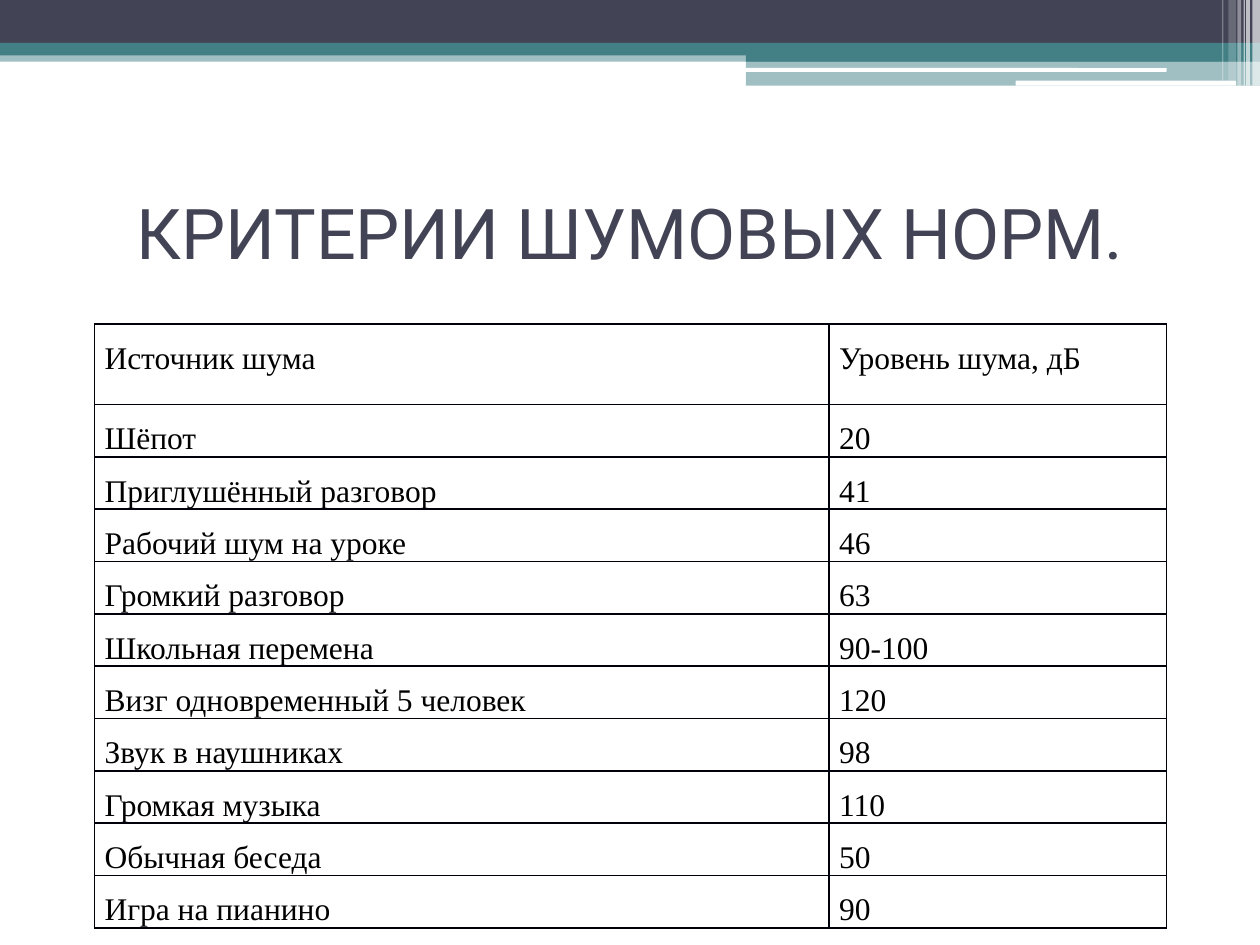
from lxml import etree
from pptx import Presentation
from pptx.dml.color import RGBColor
from pptx.enum.shapes import MSO_SHAPE
from pptx.enum.text import MSO_ANCHOR, PP_ALIGN
from pptx.oxml.ns import qn
from pptx.util import Inches, Pt

RECTANGLE = MSO_SHAPE.RECTANGLE
ROUNDED = MSO_SHAPE.ROUNDED_RECTANGLE
MIDDLE = MSO_ANCHOR.MIDDLE
CENTER = PP_ALIGN.CENTER
JUSTIFY = PP_ALIGN.JUSTIFY

COLORS = {"navy": "424456", "teal": "438086", "white": "FFFFFF",
          "black": "000000", "border": "00000A"}

TITLE = "КРИТЕРИИ ШУМОВЫХ НОРМ."
ROWS = [
    ("Источник шума", "Уровень шума, дБ"),
    ("Шёпот", "20"),
    ("Приглушённый разговор", "41"),
    ("Рабочий шум на уроке", "46"),
    ("Громкий разговор", "63"),
    ("Школьная перемена", "90-100"),
    ("Визг одновременный 5 человек", "120"),
    ("Звук в наушниках", "98"),
    ("Громкая музыка", "110"),
    ("Обычная беседа", "50"),
    ("Игра на пианино", "90"),
]
COLUMN_WIDTHS = (5.83, 2.68)
HEADER_HEIGHT, ROW_HEIGHT = 0.64, 0.41

BANDS = [
    (RECTANGLE, 0, 0.4, 10, 0.09, "teal", 50),
    (RECTANGLE, 0, 0, 10, 0.34, "navy", 100),
    (RECTANGLE, 0, 0.34, 10, 0.1, "teal", 100),
    (RECTANGLE, 5.92, 0.39, 4.08, 0.1, "teal", 100),
    (RECTANGLE, 5.92, 0.48, 4.08, 0.2, "teal", 50),
    (ROUNDED, 5.91, 0.54, 3.35, 0.03, "white", 100),
    (ROUNDED, 8.06, 0.64, 1.75, 0.04, "white", 100),
]
STRIPES = [
    (9.94, 0.06, 0.68, 65),
    (9.89, 0.03, 0.68, 65),
    (9.87, 0.01, 0.68, 60),
    (9.82, 0.03, 0.68, 40),
    (9.75, 0.06, 0.64, 20),
    (9.7, 0.01, 0.64, 30),
]


def rgb(name):
    return RGBColor.from_string(COLORS[name])


def add_band(slide, kind, left, top, width, height, color, opacity):
    band = slide.shapes.add_shape(
        kind, Inches(left), Inches(top), Inches(width), Inches(height))
    band.shadow.inherit = False
    band.line.fill.background()
    band.fill.solid()
    band.fill.fore_color.rgb = rgb(color)
    if opacity < 100:
        tint = band.fill._xPr.find(".//" + qn("a:srgbClr"))
        etree.SubElement(tint, qn("a:alpha"), val=str(opacity * 1000))


def style_text(paragraph, font_name, size, color, alignment):
    paragraph.alignment = alignment
    for span in paragraph.runs:
        span.font.name = font_name
        span.font.size = Pt(size)
        span.font.color.rgb = rgb(color)


def add_borders(cell):
    properties = cell._tc.get_or_add_tcPr()
    for position, side in enumerate(("lnL", "lnR", "lnT", "lnB")):
        line = etree.Element(qn("a:" + side), w=str(Pt(1)))
        fill = etree.SubElement(line, qn("a:solidFill"))
        etree.SubElement(fill, qn("a:srgbClr"), val=COLORS["border"])
        properties.insert(position, line)


def fill_cell(cell, text):
    cell.margin_left = cell.margin_right = Inches(0.08)
    cell.margin_top = cell.margin_bottom = 0
    cell.fill.solid()
    cell.fill.fore_color.rgb = rgb("white")
    add_borders(cell)
    cell.text_frame.text = text
    paragraph = cell.text_frame.paragraphs[0]
    paragraph.line_spacing = 1.5
    paragraph.space_after = Pt(7.5)
    style_text(paragraph, "Times New Roman", 18, "black", JUSTIFY)


def add_noise_table(slide):
    heights = [HEADER_HEIGHT] + [ROW_HEIGHT] * (len(ROWS) - 1)
    table = slide.shapes.add_table(
        len(ROWS), len(COLUMN_WIDTHS), Inches(0.75), Inches(2.57),
        Inches(sum(COLUMN_WIDTHS)), Inches(sum(heights))).table
    table.first_row = table.horz_banding = False
    for column, width in zip(table.columns, COLUMN_WIDTHS):
        column.width = Inches(width)
    for row, height, texts in zip(table.rows, heights, ROWS):
        row.height = Inches(height)
        for cell, text in zip(row.cells, texts):
            fill_cell(cell, text)


def main():
    deck = Presentation()
    deck.slide_width, deck.slide_height = Inches(10), Inches(7.5)
    slide = deck.slides.add_slide(deck.slide_layouts[5])
    for band in BANDS:
        add_band(slide, *band)
    for left, width, height, opacity in STRIPES:
        add_band(slide, RECTANGLE, left, 0, width, height, "white", opacity)

    title = slide.shapes.title
    title.left, title.top = Inches(0.5), Inches(1.25)
    title.width, title.height = Inches(9), Inches(1.17)
    title.text_frame.text = TITLE
    title.text_frame.vertical_anchor = MIDDLE
    style_text(title.text_frame.paragraphs[0], "Roboto", 40, "navy", CENTER)

    add_noise_table(slide)
    deck.save("out.pptx")


if __name__ == "__main__":
    main()
